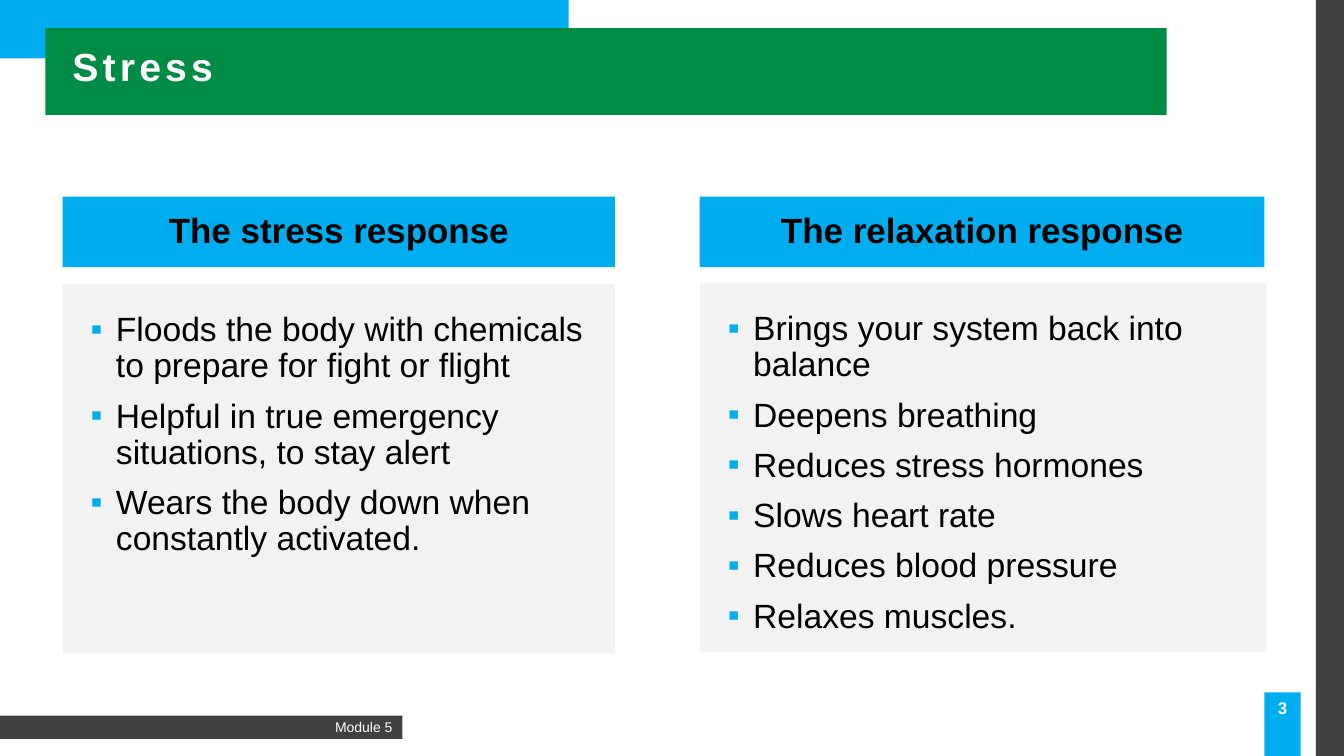
from lxml import etree
from pptx import Presentation
from pptx.dml.color import RGBColor
from pptx.enum.shapes import MSO_SHAPE
from pptx.enum.text import MSO_ANCHOR, PP_ALIGN
from pptx.oxml.ns import qn
from pptx.util import Inches, Pt

RECTANGLE = MSO_SHAPE.RECTANGLE
TOP, MIDDLE = MSO_ANCHOR.TOP, MSO_ANCHOR.MIDDLE
LEFT, CENTER, RIGHT = PP_ALIGN.LEFT, PP_ALIGN.CENTER, PP_ALIGN.RIGHT

BLUE = RGBColor(0x00, 0xAD, 0xEF)
GREEN = RGBColor(0x00, 0x8C, 0x44)
CHARCOAL = RGBColor(0x41, 0x40, 0x42)
PALE_GREY = RGBColor(0xF2, 0xF2, 0xF2)
WHITE = RGBColor(0xFF, 0xFF, 0xFF)
BLACK = RGBColor(0x00, 0x00, 0x00)

FONT = "Arial"
SLIDE_SIZE = (13.33, 7.5)
TITLE = "Stress"
FOOTER = "Module 5"
PAGE_NUMBER = "3"

BANDS = [
    ((0, 0, 5.64, 0.58), BLUE),
    ((0.45, 0.28, 11.12, 0.86), GREEN),
    ((13.05, 0, 0.28, 7.5), CHARCOAL),
]

HEADING_TOP, HEADING_HEIGHT, PANEL_HEIGHT = 1.95, 0.7, 3.66
RESPONSES = [
    {
        "heading": "The stress response",
        "points": [
            "Floods the body with chemicals to prepare for fight or flight",
            "Helpful in true emergency situations, to stay alert",
            "Wears the body down when constantly activated.",
        ],
        "left": 0.62, "heading_width": 5.48, "panel_width": 5.48, "panel_top": 2.82,
    },
    {
        "heading": "The relaxation response",
        "points": [
            "Brings your system back into balance",
            "Deepens breathing",
            "Reduces stress hormones",
            "Slows heart rate",
            "Reduces blood pressure",
            "Relaxes muscles.",
        ],
        "left": 6.94, "heading_width": 5.6, "panel_width": 5.62, "panel_top": 2.81,
    },
]


def add_block(slide, box, fill):
    block = slide.shapes.add_shape(RECTANGLE, *map(Inches, box))
    block.shadow.inherit = False
    block.fill.solid()
    block.fill.fore_color.rgb = fill
    block.line.fill.background()
    return block


def add_bullet(paragraph):
    properties = paragraph._p.get_or_add_pPr()
    properties.set("marL", str(Inches(0.25)))
    properties.set("indent", str(-Inches(0.25)))
    colour = etree.SubElement(properties, qn("a:buClr"))
    etree.SubElement(colour, qn("a:srgbClr"), val=str(BLUE))
    etree.SubElement(properties, qn("a:buFont"), typeface=FONT)
    etree.SubElement(properties, qn("a:buChar"), char="▪")


def write(holder, lines, size, color, bold=False, align=LEFT, anchor=MIDDLE,
          margins=(0.1, 0.05), line_spacing=None, space_before=0,
          letter_spacing=None, bullets=False):
    frame = holder.text_frame
    frame.word_wrap = True
    frame.vertical_anchor = anchor
    frame.margin_left = frame.margin_right = Inches(margins[0])
    frame.margin_top = frame.margin_bottom = Inches(margins[1])
    for index, line in enumerate(lines):
        paragraph = frame.add_paragraph() if index else frame.paragraphs[0]
        paragraph.alignment = align
        paragraph.line_spacing = line_spacing
        paragraph.space_before = Pt(space_before)
        if bullets:
            add_bullet(paragraph)
        run = paragraph.add_run()
        run.text = line
        run.font.name = FONT
        run.font.size = Pt(size)
        run.font.bold = bold
        run.font.color.rgb = color
        if letter_spacing:
            run._r.get_or_add_rPr().set("spc", str(letter_spacing * 100))


def main():
    deck = Presentation()
    deck.slide_width, deck.slide_height = map(Inches, SLIDE_SIZE)
    slide = deck.slides.add_slide(deck.slide_layouts[6])

    for box, fill in BANDS:
        add_block(slide, box, fill)

    footer = add_block(slide, (0, 7.1, 3.99, 0.23), CHARCOAL)
    write(footer, [FOOTER], 10, WHITE, align=RIGHT)

    page_number = add_block(slide, (12.54, 6.87, 0.36, 0.63), BLUE)
    write(page_number, [PAGE_NUMBER], 12, WHITE, bold=True, align=CENTER,
          anchor=TOP, margins=(0.04, 0.05))

    title = slide.shapes.add_textbox(*map(Inches, (0.62, 0.38, 9.07, 0.6)))
    write(title, [TITLE], 28, WHITE, bold=True, line_spacing=0.9,
          space_before=10, letter_spacing=3)

    for response in RESPONSES:
        left = response["left"]
        heading = add_block(
            slide, (left, HEADING_TOP, response["heading_width"], HEADING_HEIGHT), BLUE)
        write(heading, [response["heading"]], 25, BLACK, bold=True, align=CENTER,
              line_spacing=0.9, space_before=10)
        panel = add_block(
            slide, (left, response["panel_top"], response["panel_width"], PANEL_HEIGHT),
            PALE_GREY)
        write(panel, response["points"], 24, BLACK, anchor=TOP, margins=(0.28, 0.28),
              line_spacing=0.9, space_before=10, bullets=True)

    deck.save("out.pptx")


if __name__ == "__main__":
    main()
